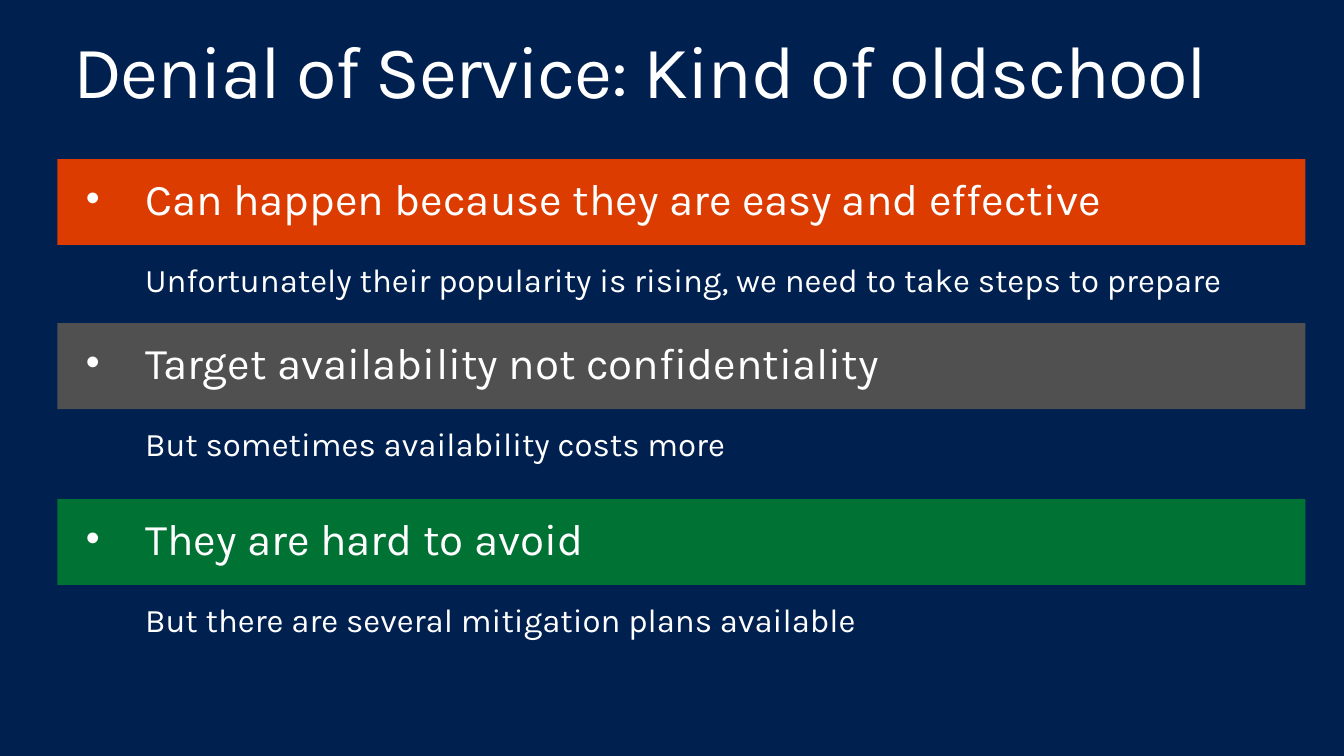
from dataclasses import dataclass

from lxml import etree
from pptx import Presentation
from pptx import util as u
from pptx.dml.color import RGBColor
from pptx.enum import shapes, text
from pptx.oxml.ns import qn

NAVY = RGBColor(0x00, 0x20, 0x50)
ORANGE = RGBColor(0xDC, 0x3C, 0x00)
GREY = RGBColor(0x50, 0x50, 0x50)
GREEN = RGBColor(0x00, 0x72, 0x33)
WHITE = RGBColor(0xFF, 0xFF, 0xFF)
FONT = "Karla"

# Grid: 136 columns across the slide, square cells
WIDTH, HEIGHT = u.Inches(13.6), u.Inches(7.65)
CELL = WIDTH / 136
LEFT, RIGHT = 5.8, 132.1


@dataclass
class Point:
    row: float
    fill: RGBColor
    head: str
    note: str


POINTS = [
    Point(16.1, ORANGE, "Can happen because they are easy and effective",
          "Unfortunately their popularity is rising, we need to take steps to prepare"),
    Point(32.7, GREY, "Target availability not confidentiality",
          "But sometimes availability costs more"),
    Point(50.5, GREEN, "They are hard to avoid",
          "But there are several mitigation plans available"),
]


def cells(*counts: float) -> list[int]:
    return [round(n * CELL) for n in counts]


def style(par, size: float) -> None:
    par.alignment = text.PP_ALIGN.LEFT
    par.font.name = FONT
    par.font.size = u.Pt(size)
    par.font.color.rgb = WHITE


def indent(par, left: float, first: float) -> None:
    props = par._p.get_or_add_pPr()
    props.set("marL", str(u.Inches(left)))
    props.set("indent", str(u.Inches(first)))


def bullet(par) -> None:
    props = par._p.get_or_add_pPr()
    for tag, key, val in (("a:buSzPct", "val", "90000"),
                          ("a:buFont", "typeface", "Arial"),
                          ("a:buChar", "char", "•")):
        etree.SubElement(props, qn(tag)).set(key, val)


def add_text(parent, box: list[int], words: str, size: float):
    frame = parent.add_textbox(*box).text_frame
    frame.word_wrap = True
    frame.auto_size = text.MSO_AUTO_SIZE.SHAPE_TO_FIT_TEXT
    par = frame.paragraphs[0]
    par.text = words
    par.space_before = u.Pt(6.1)
    style(par, size)
    return frame


def add_point(slide, point: Point) -> None:
    # Coloured band with its bulleted heading
    group = slide.shapes.add_group_shape().shapes
    band = group.add_shape(shapes.MSO_SHAPE.RECTANGLE,
                           *cells(LEFT, point.row, RIGHT - LEFT, 8.7))
    band.shadow.inherit = False
    band.fill.solid()
    band.fill.fore_color.rgb = point.fill
    band.line.fill.background()
    head = add_text(group, cells(6.5, point.row + 0.8, RIGHT - 6.5, 6.4),
                    point.head, 32)
    head.margin_left = u.Inches(0.2)
    indent(head.paragraphs[0], 0.62, -0.6)
    bullet(head.paragraphs[0])

    # Remark below the band
    note = add_text(slide.shapes, cells(13.5, point.row + 9.7, RIGHT - 13.5, 5),
                    point.note, 24)
    indent(note.paragraphs[0], 0.02, 0)


def add_title(slide, words: str) -> None:
    title = slide.shapes.title
    title.left, title.top, title.width, title.height = cells(LEFT, 2.5, 124.4, 6.8)
    frame = title.text_frame
    frame.word_wrap = True
    frame.auto_size = text.MSO_AUTO_SIZE.NONE
    frame.vertical_anchor = text.MSO_ANCHOR.TOP
    frame.margin_left = frame.margin_right = u.Inches(0.16)
    frame.margin_top = frame.margin_bottom = u.Inches(0.1)
    par = frame.paragraphs[0]
    par.text = words
    par.line_spacing = 0.9
    style(par, 54)
    par.runs[0]._r.get_or_add_rPr().set("spc", "-100")


def main() -> None:
    deck = Presentation()
    deck.slide_width, deck.slide_height = WIDTH, HEIGHT
    slide = deck.slides.add_slide(deck.slide_layouts[5])
    slide.background.fill.solid()
    slide.background.fill.fore_color.rgb = NAVY
    add_title(slide, "Denial of Service: Kind of oldschool")
    for point in POINTS:
        add_point(slide, point)
    deck.save("out.pptx")


if __name__ == "__main__":
    main()
